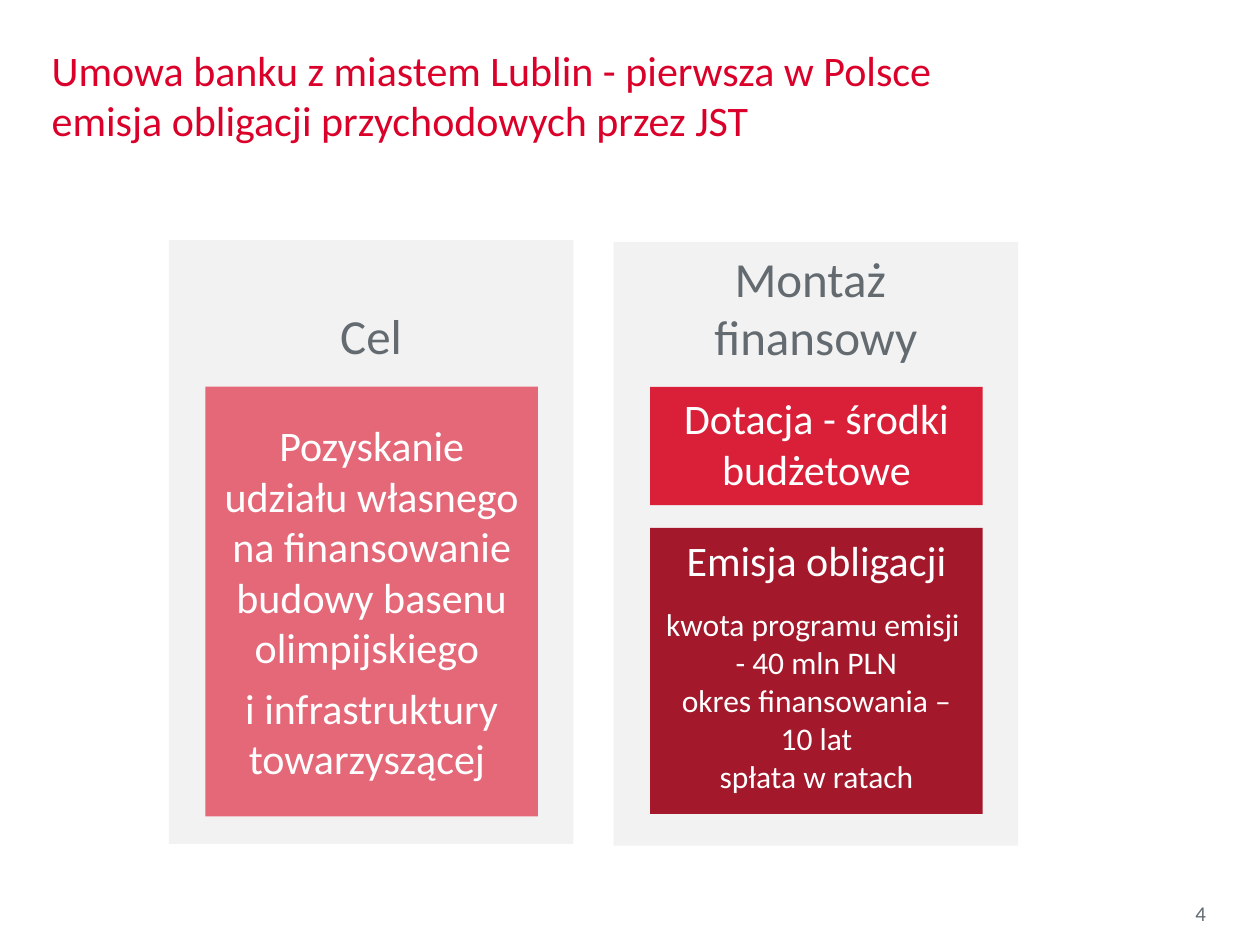
"""Build a slide about the purpose and funding of the Lublin revenue bond issue."""
import pptx
import pptx.dml.color
import pptx.enum.shapes
import pptx.enum.text
import pptx.util

COLORS = {
    "panel": "F2F2F2",
    "grey": "636B71",
    "title": "DA0029",
    "goal": "E56878",
    "grant": "DA2038",
    "bonds": "A3182A",
    "white": "FFFFFF",
}
ALIGN = pptx.enum.text.PP_ALIGN
ANCHOR = pptx.enum.text.MSO_ANCHOR
WIDTH = pptx.util.Inches(10)
HEIGHT = pptx.util.Inches(7.5)
PANEL_WIDTH, PANEL_HEIGHT = 32.1, 63.9
CARD_INSET, CARD_WIDTH, CARD_TOP = 2.9, 26.4, 40.93
GOAL_LEFT, FUNDING_LEFT = 13.4, 48.7


def color(name):
    return pptx.dml.color.RGBColor.from_string(COLORS[name])


def area(left, top, width, height):
    return (
        int(WIDTH * left / 100),
        int(HEIGHT * top / 100),
        int(WIDTH * width / 100),
        int(HEIGHT * height / 100),
    )


def write(shape, lines, size, ink, align=ALIGN.CENTER, anchor=ANCHOR.TOP, after=0):
    frame = shape.text_frame
    frame.text = "\n".join(lines)
    frame.word_wrap = True
    frame.auto_size = pptx.enum.text.MSO_AUTO_SIZE.NONE
    frame.vertical_anchor = anchor
    for paragraph in frame.paragraphs:
        paragraph.alignment = align
        paragraph.space_after = pptx.util.Pt(after)
        for run in paragraph.runs:
            run.font.name = "Calibri"
            run.font.size = pptx.util.Pt(size)
            run.font.color.rgb = color(ink)
    return frame


def add_block(slide, place, fill, lines, size, ink, **options):
    shape = slide.shapes.add_shape(pptx.enum.shapes.MSO_SHAPE.RECTANGLE, *area(*place))
    shape.shadow.inherit = False
    shape.fill.solid()
    shape.fill.fore_color.rgb = color(fill)
    shape.line.fill.background()
    return write(shape, lines, size, ink, **options)


def add_panel(slide, left, top, heading):
    place = (left, top, PANEL_WIDTH, PANEL_HEIGHT)
    return add_block(slide, place, "panel", heading, 28, "grey")


def add_card(slide, panel_left, top, height, fill, lines, **options):
    place = (panel_left + CARD_INSET, top, CARD_WIDTH, height)
    return add_block(slide, place, fill, lines, 24, "white", **options)


def set_title(slide, text):
    title = slide.shapes.title
    title.left, title.top, title.width, title.height = area(3.1, 4, 72, 14.27)
    write(title, [text], 24, "title", align=ALIGN.LEFT)


def add_page_number(slide, number):
    box = slide.shapes.add_textbox(*area(75.3, 94.67, 21.4, 5.33))
    write(box, [number], 12, "grey", align=ALIGN.RIGHT)


def add_goal(slide):
    heading = add_panel(slide, GOAL_LEFT, 25.4, ["Cel"])
    heading.margin_top = pptx.util.Inches(0.52)
    lines = [
        "Pozyskanie udziału własnego na finansowanie budowy basenu olimpijskiego ",
        "i infrastruktury towarzyszącej ",
    ]
    add_card(slide, GOAL_LEFT, CARD_TOP, 45.47, "goal", lines, anchor=ANCHOR.MIDDLE, after=6)


def add_funding(slide):
    add_panel(slide, FUNDING_LEFT, 25.6, ["Montaż ", "finansowy"])
    add_card(slide, FUNDING_LEFT, CARD_TOP, 12.53, "grant", ["Dotacja - środki budżetowe"])
    lines = [
        "Emisja obligacji",
        "kwota programu emisji ",
        "- 40 mln PLN",
        "okres finansowania – 10 lat",
        "spłata w ratach",
    ]
    frame = add_card(slide, FUNDING_LEFT, 55.87, 30.27, "bonds", lines)
    heading, *details = frame.paragraphs
    heading.space_after = pptx.util.Pt(12)
    for paragraph in details:
        for run in paragraph.runs:
            run.font.size = pptx.util.Pt(18)


def main():
    presentation = pptx.Presentation()
    presentation.slide_width = WIDTH
    presentation.slide_height = HEIGHT
    slide = presentation.slides.add_slide(presentation.slide_layouts[5])
    set_title(
        slide,
        "Umowa banku z miastem Lublin - pierwsza w Polsce "
        "emisja obligacji przychodowych przez JST",
    )
    add_goal(slide)
    add_funding(slide)
    add_page_number(slide, "4")
    presentation.save("out.pptx")


if __name__ == "__main__":
    main()
